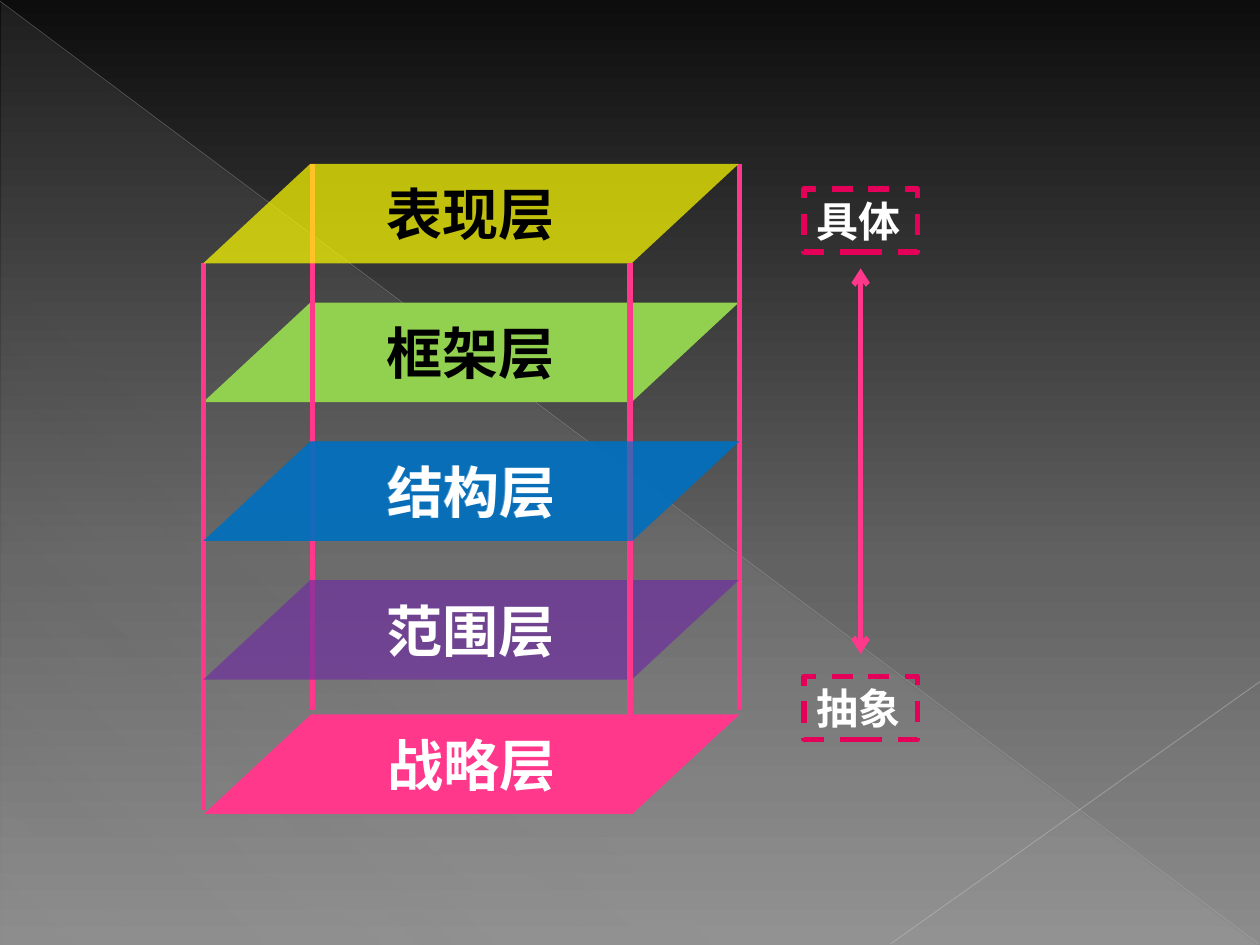
import pptx
import pptx.util
import pptx.dml.color
import pptx.enum.dml
import pptx.enum.shapes
import pptx.enum.text
import pptx.oxml.ns
from lxml import etree

Pt = pptx.util.Pt
qn = pptx.oxml.ns.qn
MSO_SHAPE = pptx.enum.shapes.MSO_SHAPE
PP_ALIGN = pptx.enum.text.PP_ALIGN
MSO_ANCHOR = pptx.enum.text.MSO_ANCHOR


def rgb(color):
    return pptx.dml.color.RGBColor.from_string(color)


def set_alpha(parent, percent):
    """Make the first plain colour below parent partly transparent."""
    clr = next(parent.iter(qn("a:srgbClr")))
    etree.SubElement(clr, qn("a:alpha"), val=str(percent * 1000))


def set_gradient(fill, element, stops, angle):
    """Give a fill gradient stops of (position, colour, opacity)."""
    fill.gradient()
    grad = next(element.iter(qn("a:gradFill")))
    gs_lst = grad.find(qn("a:gsLst"))
    for gs in list(gs_lst):
        gs_lst.remove(gs)
    for pos, color, alpha in stops:
        gs = etree.SubElement(gs_lst, qn("a:gs"), pos=str(pos * 1000))
        etree.SubElement(gs, qn("a:srgbClr"), val=color)
        set_alpha(gs, alpha)
    grad.find(qn("a:lin")).set("ang", str(angle * 60000))


class Deck:
    font = "League Spartan"
    pink = "FF388C"
    frame = "E40059"
    stroke = 3

    def __init__(self, slide):
        self.s = slide

    def shape(self, kind, x, y, w, h):
        sp = self.s.shapes.add_shape(kind, Pt(x), Pt(y), Pt(w), Pt(h))
        sp.shadow.inherit = False
        sp.fill.background()
        sp.line.fill.background()
        return sp

    def text(self, sp, text, size, color, align):
        p = sp.text_frame.paragraphs[0]
        p.text = text
        p.alignment = align
        p.font.name = self.font
        p.font.size = Pt(size)
        p.font.bold = True
        p.font.color.rgb = rgb(color)

    def line(self, x1, y1, x2, y2, color=pink, width=stroke, alpha=100, arrows=False):
        cn = self.s.shapes.add_connector(
            pptx.enum.shapes.MSO_CONNECTOR.STRAIGHT, Pt(x1), Pt(y1), Pt(x2), Pt(y2))
        cn.line.color.rgb = rgb(color)
        cn.line.width = Pt(width)
        sp_pr = cn.element.spPr
        if alpha < 100:
            set_alpha(sp_pr, alpha)
        if arrows:
            for end in ("a:headEnd", "a:tailEnd"):
                etree.SubElement(sp_pr.find(qn("a:ln")), qn(end), type="arrow")
        etree.SubElement(sp_pr, qn("a:effectLst"))

    def layer(self, text, x, y, w, h, fill, color, alpha=100):
        sp = self.shape(MSO_SHAPE.FLOWCHART_DATA, x, y, w, h)
        sp.fill.solid()
        sp.fill.fore_color.rgb = rgb(fill)
        if alpha < 100:
            set_alpha(sp.element.spPr, alpha)
        sp.text_frame.vertical_anchor = MSO_ANCHOR.MIDDLE
        self.text(sp, text, 32, color, PP_ALIGN.CENTER)

    def label(self, text, x, y, w, h):
        sp = self.shape(MSO_SHAPE.RECTANGLE, x, y, w, h)
        sp.line.color.rgb = rgb(self.frame)
        sp.line.width = Pt(self.stroke)
        sp.line.dash_style = pptx.enum.dml.MSO_LINE.DASH
        tf = sp.text_frame
        tf.word_wrap = False
        tf.vertical_anchor = MSO_ANCHOR.TOP
        self.text(sp, text, 24, "FFFFFF", PP_ALIGN.LEFT)


def main():
    prs = pptx.Presentation()
    prs.slide_width, prs.slide_height = Pt(720), Pt(540)
    s = prs.slides.add_slide(prs.slide_layouts[6])
    deck = Deck(s)

    # Background with its triangle and hairlines
    set_gradient(s.background.fill, s.element,
                 [(0, "0D0D0D", 100), (60, "626262", 100), (100, "8C8C8C", 100)], 90)
    triangle = deck.shape(MSO_SHAPE.RIGHT_TRIANGLE, 0.7, 1.4, 718.6, 538.6)
    set_gradient(triangle.fill, triangle.element,
                 [(0, "D2D2D2", 10), (70, "D2D2D2", 8), (100, "D2D2D2", 1)], 133)
    deck.line(0, 0.7, 719.3, 539.3, "BFBFBF", 0.39, 35)
    deck.line(720, 389.5, 509, 539.3, "C6C6C6", 0.47, 45)

    # Scale from concrete to abstract
    deck.line(491.8, 153.4, 491.8, 373.7, arrows=True)
    for text, y in (("具体", 108), ("抽象", 386.6)):
        deck.label(text, 459.4, y, 64.8, 36)

    # Stack of layers: four at an equal step, the base a little closer
    left, top, width, height, step = 116.1, 93.6, 306, 56.9, 79.3
    base_top = 408.2
    depth = base_top - top
    front = top + height

    deck.layer("框架层", left, top + step, width, height, "92D050", "000000")
    deck.layer("战略层", left + 0.5, base_top, width, height, deck.pink, "FFFFFF")

    # Posts behind the see-through layers
    for x, y in ((left, front), (left + width + 0.5, top), (178.6, top)):
        deck.line(x, y, x, y + depth - 2.5)

    for text, row, fill, color in (("结构层", 2, "0070C0", "FFFFFF"),
                                   ("范围层", 3, "7030A0", "FFFFFF"),
                                   ("表现层", 0, "FFFF00", "000000")):
        deck.layer(text, left, top + row * step, width, height, fill, color, 70)

    # Front post, veiled by a second structure layer
    deck.line(360, front, 360, front + depth - 2.5)
    deck.layer("结构层", left + 0.5, top + 2 * step, width, height, "0070C0", "FFFFFF", 70)

    prs.save("out.pptx")


if __name__ == "__main__":
    main()
